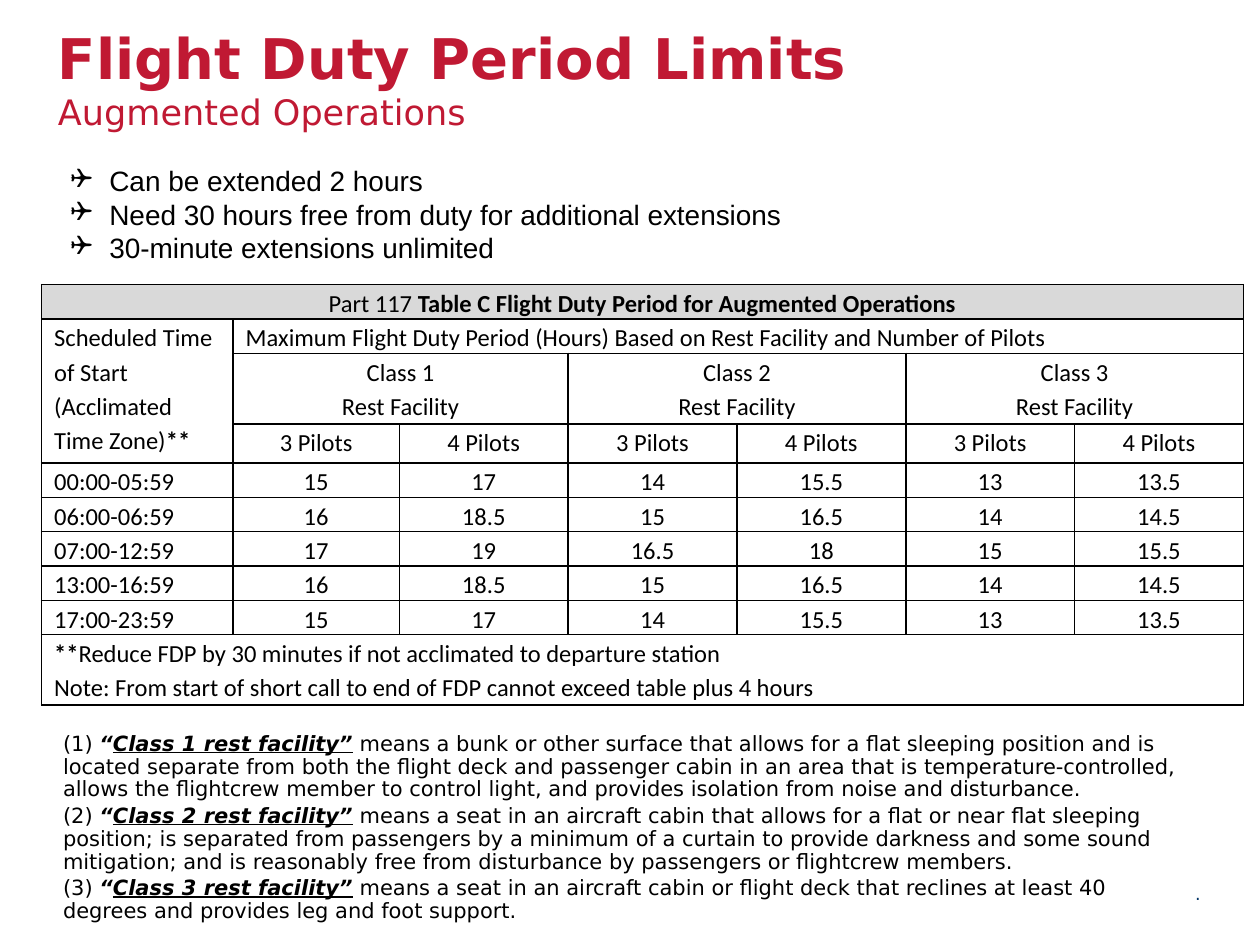
import pptx
import pptx.dml.color
import pptx.enum.text
import pptx.oxml
import pptx.oxml.ns
import pptx.util
from dataclasses import dataclass

Inches = pptx.util.Inches
Pt = pptx.util.Pt
ALIGN = pptx.enum.text.PP_ALIGN
ANCHOR = pptx.enum.text.MSO_ANCHOR
AUTO_SIZE = pptx.enum.text.MSO_AUTO_SIZE
NAMESPACE = pptx.oxml.ns.nsdecls("a")


@dataclass(frozen=True)
class Theme:
    red: str = "C01933"
    navy: str = "003366"
    black: str = "000000"
    white: str = "FFFFFF"
    grey: str = "D9D9D9"
    heading_font: str = "DejaVu Sans"
    table_font: str = "Calibri"
    bullet_font: str = "Arial"
    title_size: int = 32
    subtitle_size: int = 20
    bullet_size: int = 16
    table_size: int = 14
    definition_size: int = 12
    footer_size: int = 10


class SlideBuilder:
    def __init__(self, presentation, theme):
        self.theme = theme
        self.slide = presentation.slides.add_slide(presentation.slide_layouts[1])

    def place(self, shape, box):
        for name, value in zip(("left", "top", "width", "height"), box):
            setattr(shape, name, Inches(value))

    def format_frame(self, frame, inset=0, **values):
        defaults = {"word_wrap": True, "auto_size": AUTO_SIZE.NONE, "vertical_anchor": ANCHOR.TOP}
        for side in ("left", "right", "top", "bottom"):
            defaults[f"margin_{side}"] = Inches(inset)
        for name, value in (defaults | values).items():
            setattr(frame, name, value)

    def add_run(self, paragraph, text, font, size, color, **values):
        run = paragraph.add_run()
        run.text = text
        for name, value in {"name": font, "size": Pt(size), "bold": False, **values}.items():
            setattr(run.font, name, value)
        run.font.color.rgb = pptx.dml.color.RGBColor.from_string(color)

    def paragraphs(self, frame, count):
        return [frame.paragraphs[0]] + [frame.add_paragraph() for _ in range(count - 1)]

    def set_bullet(self, paragraph, character=None, indent=0):
        properties = paragraph._p.get_or_add_pPr()
        properties.set("marL", str(Inches(indent)))
        properties.set("indent", str(-Inches(indent)))
        tag = f'<a:buChar {NAMESPACE} char="{character}"/>' if character else f"<a:buNone {NAMESPACE}/>"
        properties.append(pptx.oxml.parse_xml(tag))

    def add_title(self, box, title, subtitle):
        theme = self.theme
        shape = self.slide.shapes.title
        self.place(shape, box)
        self.format_frame(shape.text_frame, vertical_anchor=ANCHOR.MIDDLE)
        paragraph = shape.text_frame.paragraphs[0]
        paragraph.alignment = ALIGN.LEFT
        self.add_run(paragraph, title, theme.heading_font, theme.title_size, theme.red, bold=True)
        paragraph.add_line_break()
        self.add_run(paragraph, subtitle, theme.heading_font, theme.subtitle_size, theme.red)

    def add_bullets(self, box, items):
        theme = self.theme
        shape = self.slide.shapes.add_textbox(*map(Inches, box))
        self.format_frame(shape.text_frame, 0.1, word_wrap=False, margin_top=Inches(0.05),
                          margin_bottom=Inches(0.05))
        for paragraph, item in zip(self.paragraphs(shape.text_frame, len(items)), items):
            self.set_bullet(paragraph, "✈", 0.31)
            self.add_run(paragraph, item, theme.bullet_font, theme.bullet_size, theme.black)

    def add_definitions(self, box, definitions):
        theme = self.theme
        shape = self.slide.placeholders[1]
        self.place(shape, box)
        shape.fill.solid()
        shape.fill.fore_color.rgb = pptx.dml.color.RGBColor.from_string(theme.white)
        self.format_frame(shape.text_frame)
        lines = self.paragraphs(shape.text_frame, len(definitions))
        style = (theme.heading_font, theme.definition_size, theme.black)
        for number, (paragraph, meaning) in enumerate(zip(lines, definitions), 1):
            paragraph.line_spacing = 0.9
            paragraph.space_before = Pt(2.4)
            self.set_bullet(paragraph)
            self.add_run(paragraph, f"({number}) ", *style)
            self.add_run(paragraph, "“", *style, bold=True, italic=True)
            self.add_run(paragraph, f"Class {number} rest facility”", *style,
                         bold=True, italic=True, underline=True)
            self.add_run(paragraph, f" means {meaning}", *style)

    def add_footer(self, box, text):
        theme = self.theme
        shape = self.slide.shapes.add_textbox(*map(Inches, box))
        self.format_frame(shape.text_frame)
        paragraph = shape.text_frame.paragraphs[0]
        paragraph.alignment = ALIGN.RIGHT
        self.add_run(paragraph, text, theme.heading_font, theme.footer_size, theme.navy)

    def add_table(self, box, widths, heights):
        frame = self.slide.shapes.add_table(len(heights), len(widths), *map(Inches, box))
        table = frame.table
        table.first_row = table.horz_banding = False
        for column, width in zip(table.columns, widths):
            column.width = Inches(width)
        for row, height in zip(table.rows, heights):
            row.height = Inches(height)
        for cell in table.iter_cells():
            self.style_cell(cell, self.theme.white)
        return table

    def style_cell(self, cell, fill):
        cell.margin_left = cell.margin_right = Inches(0.1)
        cell.margin_top = cell.margin_bottom = 0
        properties = cell._tc.get_or_add_tcPr()
        for side in ("lnL", "lnR", "lnT", "lnB"):
            properties.append(pptx.oxml.parse_xml(
                f'<a:{side} {NAMESPACE} w="{Pt(1)}"><a:solidFill>'
                f'<a:srgbClr val="{self.theme.black}"/></a:solidFill></a:{side}>'))
        self.fill_cell(cell, fill)

    def fill_cell(self, cell, color):
        cell.fill.solid()
        cell.fill.fore_color.rgb = pptx.dml.color.RGBColor.from_string(color)

    def write_cell(self, cell, *lines, alignment=ALIGN.CENTER):
        """Each line is a list of (text, bold) pairs or a plain string."""
        theme = self.theme
        for paragraph, line in zip(self.paragraphs(cell.text_frame, len(lines)), lines):
            paragraph.alignment = alignment
            paragraph.line_spacing = 1.15
            for text, bold in [(line, False)] if isinstance(line, str) else line:
                self.add_run(paragraph, text, theme.table_font, theme.table_size, theme.black, bold=bold)


LIMITS = {
    "00:00-05:59": (15, 17, 14, 15.5, 13, 13.5),
    "06:00-06:59": (16, 18.5, 15, 16.5, 14, 14.5),
    "07:00-12:59": (17, 19, 16.5, 18, 15, 15.5),
    "13:00-16:59": (16, 18.5, 15, 16.5, 14, 14.5),
    "17:00-23:59": (15, 17, 14, 15.5, 13, 13.5),
}
DEFINITIONS = [
    "a bunk or other surface that allows for a flat sleeping position and is located separate from "
    "both the flight deck and passenger cabin in an area that is temperature-controlled, allows the "
    "flightcrew member to control light, and provides isolation from noise and disturbance.",
    "a seat in an aircraft cabin that allows for a flat or near flat sleeping position; is separated "
    "from passengers by a minimum of a curtain to provide darkness and some sound mitigation; and is "
    "reasonably free from disturbance by passengers or flightcrew members.",
    "a seat in an aircraft cabin or flight deck that reclines at least 40 degrees and provides leg "
    "and foot support.",
]


def add_limits_table(builder):
    heights = [0.27, 0.27, 0.56, 0.31] + [0.27] * len(LIMITS) + [0.56]
    table = builder.add_table((0.33, 2.26, 9.54, 3.32), [1.52, 1.32] + [1.34] * 5, heights)
    last = len(heights) - 1

    # Caption and headings
    for first, end in (((0, 0), (0, 6)), ((1, 0), (3, 0)), ((1, 1), (1, 6)), ((last, 0), (last, 6))):
        table.cell(*first).merge(table.cell(*end))
    builder.fill_cell(table.cell(0, 0), builder.theme.grey)
    builder.write_cell(table.cell(0, 0), [
        ("Part 117 ", False), ("Table C Flight Duty Period for Augmented Operations", True)])
    builder.write_cell(table.cell(1, 0), [
        ("Scheduled Time of Start (Acclimated Time Zone)", False), ("**", True)], alignment=ALIGN.LEFT)
    builder.write_cell(
        table.cell(1, 1), "Maximum Flight Duty Period (Hours) Based on Rest Facility and Number of Pilots",
        alignment=ALIGN.LEFT)
    for number in (1, 2, 3):
        column = 2 * number - 1
        table.cell(2, column).merge(table.cell(2, column + 1))
        builder.write_cell(table.cell(2, column), f"Class {number}", "Rest Facility")
        for offset, pilots in enumerate((3, 4)):
            builder.write_cell(table.cell(3, column + offset), f"{pilots} Pilots")

    # Limits by start time, then the notes
    for row, (start, hours) in enumerate(LIMITS.items(), 4):
        builder.write_cell(table.cell(row, 0), start, alignment=ALIGN.LEFT)
        for column, value in enumerate(hours, 1):
            builder.write_cell(table.cell(row, column), str(value))
    builder.write_cell(
        table.cell(last, 0),
        [("**", True), ("Reduce FDP by 30 minutes if not acclimated to departure station", False)],
        "Note: From start of short call to end of FDP cannot exceed table plus 4 hours", alignment=ALIGN.LEFT)


def main():
    presentation = pptx.Presentation()
    presentation.slide_width, presentation.slide_height = Inches(10), Inches(7.5)
    builder = SlideBuilder(presentation, Theme())
    builder.add_title((0.46, 0.16, 9, 0.92), "Flight Duty Period Limits", "Augmented Operations")
    add_limits_table(builder)
    builder.add_bullets((0.46, 1.25, 5.92, 0.91), [
        "Can be extended 2 hours",
        "Need 30 hours free from duty for additional extensions",
        "30-minute extensions unlimited",
    ])
    builder.add_definitions((0.5, 5.82, 9, 1.68), DEFINITIONS)
    builder.add_footer((9.33, 7.01, 0.2, 0.33), ".")
    presentation.save("out.pptx")


if __name__ == "__main__":
    main()
